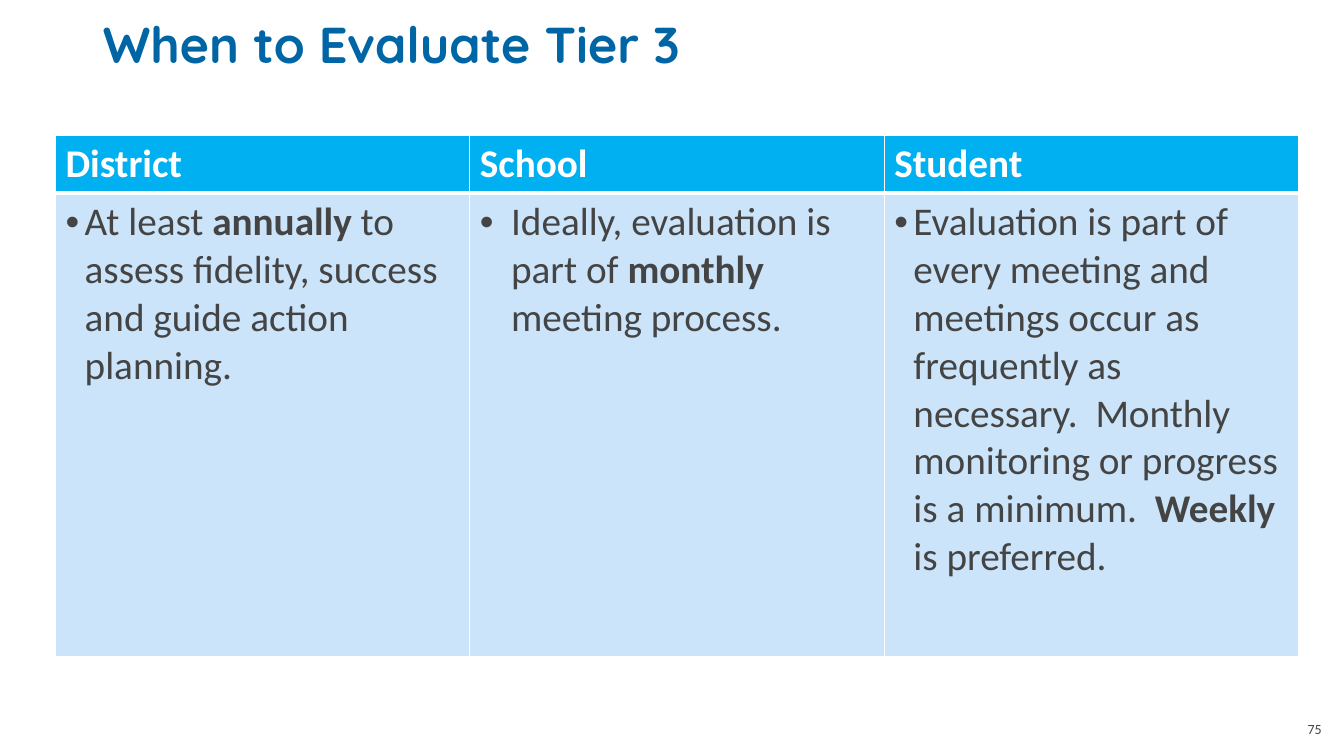
from lxml import etree
from pptx import Presentation
from pptx.dml.color import RGBColor
from pptx.enum.text import MSO_ANCHOR, PP_ALIGN
from pptx.oxml.ns import qn
from pptx.util import Inches, Pt

TOP = MSO_ANCHOR.TOP
LEFT = PP_ALIGN.LEFT
COLORS = {
    "title": "0065A4",
    "header": "00B0F0",
    "body": "CCE4F9",
    "text": "444444",
    "white": "FFFFFF",
}
LEVELS = [
    ("District", 0.19, ["At least ", "annually",
                        " to assess fidelity, success and guide action planning."]),
    ("School", 0.31, ["Ideally, evaluation is part of ", "monthly", " meeting process."]),
    ("Student", 0.19, ["Evaluation is part of every meeting and meetings occur as frequently "
                       "as necessary.  Monthly monitoring or progress is a minimum.  ",
                       "Weekly", " is preferred."]),
]
TABLE_WIDTH = 12.33
ROW_HEIGHTS = [0.57, 4.6]


def style_font(font, name, size, color, bold=False):
    font.name = name
    font.size = Pt(size)
    font.bold = bold
    font.color.rgb = RGBColor.from_string(COLORS[color])


def style_cell(cell, fill, bottom_width, top_width):
    cell.fill.solid()
    cell.fill.fore_color.rgb = RGBColor.from_string(COLORS[fill])
    properties = cell._tc.get_or_add_tcPr()
    widths = {"a:lnL": 1, "a:lnR": 1, "a:lnT": top_width, "a:lnB": bottom_width}
    for position, (side, width) in enumerate(widths.items()):
        border = etree.Element(qn(side), w=str(Pt(width)))
        paint = etree.SubElement(border, qn("a:solidFill"))
        etree.SubElement(paint, qn("a:srgbClr"), val=COLORS["white"])
        properties.insert(position, border)


deck = Presentation()
deck.slide_width = Inches(13.33)
deck.slide_height = Inches(7.5)
page = deck.slides.add_slide(deck.slide_layouts[5])

title = page.shapes.title
title.left, title.top = Inches(0.92), Inches(0.15)
title.width, title.height = Inches(11.5), Inches(1.45)
title.text_frame.text = "When to Evaluate Tier 3"
title.text_frame.vertical_anchor = TOP
heading = title.text_frame.paragraphs[0]
heading.alignment = LEFT
heading.line_spacing = 0.9
style_font(heading.runs[0].font, "Quicksand", 36, "title", True)

table = page.shapes.add_table(
    len(ROW_HEIGHTS), len(LEVELS), Inches(0.55), Inches(1.34),
    Inches(TABLE_WIDTH), Inches(sum(ROW_HEIGHTS))).table
for row, height in zip(table.rows, ROW_HEIGHTS):
    row.height = Inches(height)

for index, (level, indent, parts) in enumerate(LEVELS):
    table.columns[index].width = Inches(TABLE_WIDTH / len(LEVELS))

    header = table.cell(0, index)
    header.text_frame.text = level
    style_font(header.text_frame.paragraphs[0].runs[0].font, "Calibri", 28, "white", True)
    style_cell(header, "header", 3, 1)

    body = table.cell(1, index)
    para = body.text_frame.paragraphs[0]
    settings = para._p.get_or_add_pPr()
    settings.set("marL", str(Inches(indent)))
    settings.set("indent", str(-Inches(indent)))
    etree.SubElement(settings, qn("a:buFont"), typeface="Arial")
    etree.SubElement(settings, qn("a:buChar"), char="•")
    for part, text in enumerate(parts):
        span = para.add_run()
        span.text = text
        style_font(span.font, "Calibri", 28, "text", part == 1)
    style_cell(body, "body", 1, 3)

number = page.shapes.add_textbox(Inches(12.87), Inches(7.1), Inches(0.37), Inches(0.27))
number.text_frame.text = "75"
style_font(number.text_frame.paragraphs[0].runs[0].font, "Calibri", 10, "text")

deck.save("out.pptx")
